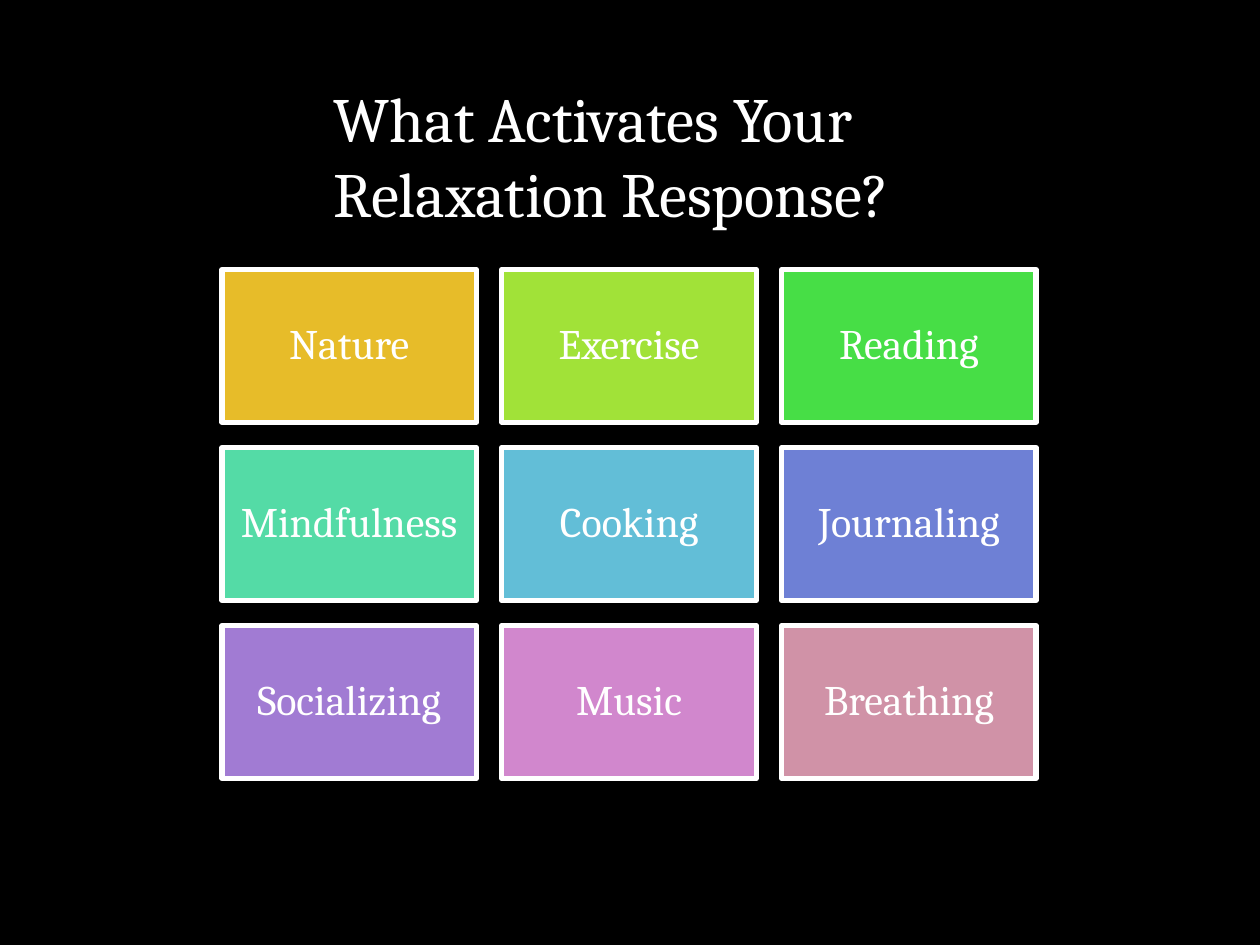
"""Build a slide with a title over a three-by-three grid of relaxation activities."""
from pptx import Presentation
from pptx import util as u
from pptx.dml import color
from pptx.enum import shapes, text

FONT = "Cambria"
COLOURS = {
    "background": "000000",
    "white": "FFFFFF",
    "Nature": "E7BC29",
    "Exercise": "A1E238",
    "Reading": "47DE46",
    "Mindfulness": "54DBA6",
    "Cooking": "62BED7",
    "Journaling": "6E80D5",
    "Socializing": "A17BD3",
    "Music": "D187CD",
    "Breathing": "D092A7",
}
ACTIVITIES = [
    "Nature", "Exercise", "Reading",
    "Mindfulness", "Cooking", "Journaling",
    "Socializing", "Music", "Breathing",
]
COLUMNS = 3
GRID_LEFT, GRID_TOP = 126.8, 154.1
TILE_WIDTH, TILE_HEIGHT = 145.4, 87.2
GAP = 14.55
TILE_INSET = 7.2


def rgb(name):
    return color.RGBColor.from_string(COLOURS[name])


def add_words(paragraph, words, size):
    run = paragraph.add_run()
    run.text = words
    run.font.name = FONT
    run.font.size = u.Pt(size)
    run.font.color.rgb = rgb("white")


def add_title(slide, words):
    title = slide.shapes.add_textbox(u.Pt(183.6), u.Pt(41.8), u.Pt(351.4), u.Pt(94.3))
    frame = title.text_frame
    frame.word_wrap = True
    frame.auto_size = text.MSO_AUTO_SIZE.SHAPE_TO_FIT_TEXT
    add_words(frame.paragraphs[0], words, 36)


def add_tile(slide, activity, row, column):
    left = GRID_LEFT + column * (TILE_WIDTH + GAP)
    top = GRID_TOP + row * (TILE_HEIGHT + GAP)
    tile = slide.shapes.add_shape(
        shapes.MSO_SHAPE.RECTANGLE,
        u.Pt(left), u.Pt(top), u.Pt(TILE_WIDTH), u.Pt(TILE_HEIGHT),
    )
    tile.shadow.inherit = False
    tile.fill.solid()
    tile.fill.fore_color.rgb = rgb(activity)
    tile.line.color.rgb = rgb("white")
    tile.line.width = u.Pt(3)

    frame = tile.text_frame
    frame.word_wrap = True
    frame.vertical_anchor = text.MSO_ANCHOR.MIDDLE
    frame.margin_left = frame.margin_right = u.Pt(TILE_INSET)
    frame.margin_top = frame.margin_bottom = u.Pt(TILE_INSET)
    label = frame.paragraphs[0]
    label.alignment = text.PP_ALIGN.CENTER
    label.line_spacing = 0.9
    add_words(label, activity, 24)


def main():
    deck = Presentation()
    deck.slide_width, deck.slide_height = u.Pt(720), u.Pt(540)
    slide = deck.slides.add_slide(deck.slide_layouts[6])
    slide.background.fill.solid()
    slide.background.fill.fore_color.rgb = rgb("background")

    add_title(slide, "What Activates Your Relaxation Response?")
    for index, activity in enumerate(ACTIVITIES):
        add_tile(slide, activity, *divmod(index, COLUMNS))
    deck.save("out.pptx")


if __name__ == "__main__":
    main()
